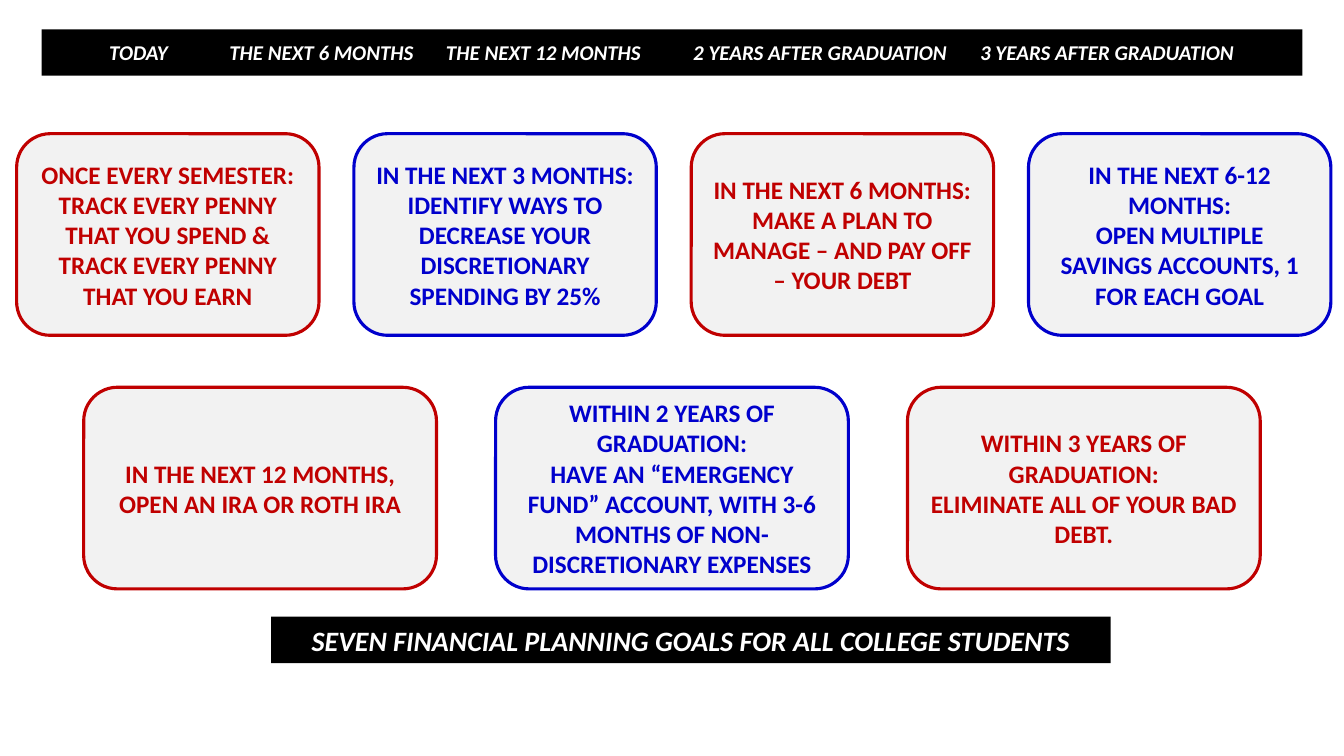
from dataclasses import dataclass
from lxml.etree import SubElement
from pptx import Presentation
from pptx.dml.color import RGBColor
from pptx.enum.shapes import MSO_SHAPE as Shape
from pptx.enum.text import MSO_ANCHOR as Anchor, MSO_AUTO_SIZE as AutoSize, PP_ALIGN as Align
from pptx.oxml.ns import qn
from pptx.util import Cm, Pt

TITLE = "SEVEN FINANCIAL PLANNING GOALS FOR ALL COLLEGE STUDENTS"
TIMELINE = [
    ("TODAY", 0),
    ("THE NEXT 6 MONTHS", 3.03),
    ("THE NEXT 12 MONTHS", 8.49),
    ("2 YEARS AFTER GRADUATION", 14.72),
    ("3 YEARS AFTER GRADUATION", 21.95),
]
NEAR_GOALS = [
    ["ONCE EVERY SEMESTER:", "TRACK EVERY PENNY THAT YOU SPEND & TRACK EVERY PENNY THAT YOU EARN"],
    ["IN THE NEXT 3 MONTHS:", "IDENTIFY WAYS TO DECREASE YOUR DISCRETIONARY SPENDING BY 25%"],
    ["IN THE NEXT 6 MONTHS:", "MAKE A PLAN TO MANAGE – AND PAY OFF – YOUR DEBT"],
    ["IN THE NEXT 6-12 MONTHS:", "OPEN MULTIPLE SAVINGS ACCOUNTS, 1 FOR EACH GOAL"],
]
LATER_GOALS = [
    ["IN THE NEXT 12 MONTHS, OPEN AN IRA OR ROTH IRA"],
    ["WITHIN 2 YEARS OF GRADUATION:",
     "HAVE AN “EMERGENCY FUND” ACCOUNT, WITH 3-6 MONTHS OF NON-DISCRETIONARY EXPENSES"],
    ["WITHIN 3 YEARS OF GRADUATION:", "ELIMINATE ALL OF YOUR BAD DEBT."],
]
ROWS = [
    dict(goals=NEAR_GOALS, left=0.42, top=3.37, width=7.62, pitch=8.5),
    dict(goals=LATER_GOALS, left=2.11, top=9.76, width=8.89, pitch=10.38),
]
GOAL_HEIGHT = 5.08
BAR_HEIGHT = 1.17


@dataclass(frozen=True)
class Theme:
    font: str = "Calibri"
    bar: RGBColor = RGBColor(0x00, 0x00, 0x00)
    bar_text: RGBColor = RGBColor(0xFF, 0xFF, 0xFF)
    card: RGBColor = RGBColor(0xF2, 0xF2, 0xF2)
    accents: tuple = (RGBColor(0xC0, 0x00, 0x00), RGBColor(0x00, 0x00, 0xCC))
    timeline_size: int = 15
    goal_size: int = 18
    title_size: int = 20
    outline: float = 2.25


THEME = Theme()


def write(box, lines, *, size, color, italic=False, align=Align.CENTER, tabs=()):
    frame = box.text_frame
    frame.word_wrap = True
    frame.auto_size = AutoSize.NONE
    frame.vertical_anchor = Anchor.MIDDLE
    for index, line in enumerate(lines):
        para = frame.add_paragraph() if index else frame.paragraphs[0]
        para.alignment = align
        if tabs:
            stops = SubElement(para._p.get_or_add_pPr(), qn("a:tabLst"))
            for stop in tabs:
                SubElement(stops, qn("a:tab"), pos=str(Cm(stop)), algn="l")
        span = para.add_run()
        span.text = line
        font = span.font
        font.name, font.size, font.bold, font.italic = THEME.font, Pt(size), True, italic
        font.color.rgb = color


def add_box(page, kind, left, top, width, height, fill, line=None):
    box = page.shapes.add_shape(kind, Cm(left), Cm(top), Cm(width), Cm(height))
    box.shadow.inherit = False
    box.fill.solid()
    box.fill.fore_color.rgb = fill
    if line is None:
        box.line.fill.background()
    else:
        box.line.color.rgb = line
        box.line.width = Pt(THEME.outline)
    return box


def add_timeline(page):
    bar = add_box(page, Shape.RECTANGLE, 1.05, 0.74, 31.77, BAR_HEIGHT, THEME.bar)
    bar.text_frame.margin_left = Cm(1.7)
    labels = [label for label, _ in TIMELINE]
    write(bar, ["\t".join(labels)], size=THEME.timeline_size, color=THEME.bar_text,
          italic=True, align=Align.LEFT, tabs=[stop for _, stop in TIMELINE[1:]])


def add_goals(page, goals, left, top, width, pitch):
    for index, goal in enumerate(goals):
        accent = THEME.accents[index % 2]
        box = add_box(page, Shape.ROUNDED_RECTANGLE, left + index * pitch, top,
                      width, GOAL_HEIGHT, THEME.card, accent)
        write(box, goal, size=THEME.goal_size, color=accent)


def add_title(page):
    title = page.shapes.title
    title.left, title.top = Cm(6.83), Cm(15.54)
    title.width, title.height = Cm(21.16), Cm(BAR_HEIGHT)
    title.fill.solid()
    title.fill.fore_color.rgb = THEME.bar
    write(title, [TITLE], size=THEME.title_size, color=THEME.bar_text, italic=True)


def main():
    deck = Presentation()
    deck.slide_width, deck.slide_height = Cm(33.87), Cm(19.05)
    page = deck.slides.add_slide(deck.slide_layouts[5])
    add_timeline(page)
    for row in ROWS:
        add_goals(page, **row)
    add_title(page)
    deck.save("out.pptx")


if __name__ == "__main__":
    main()
